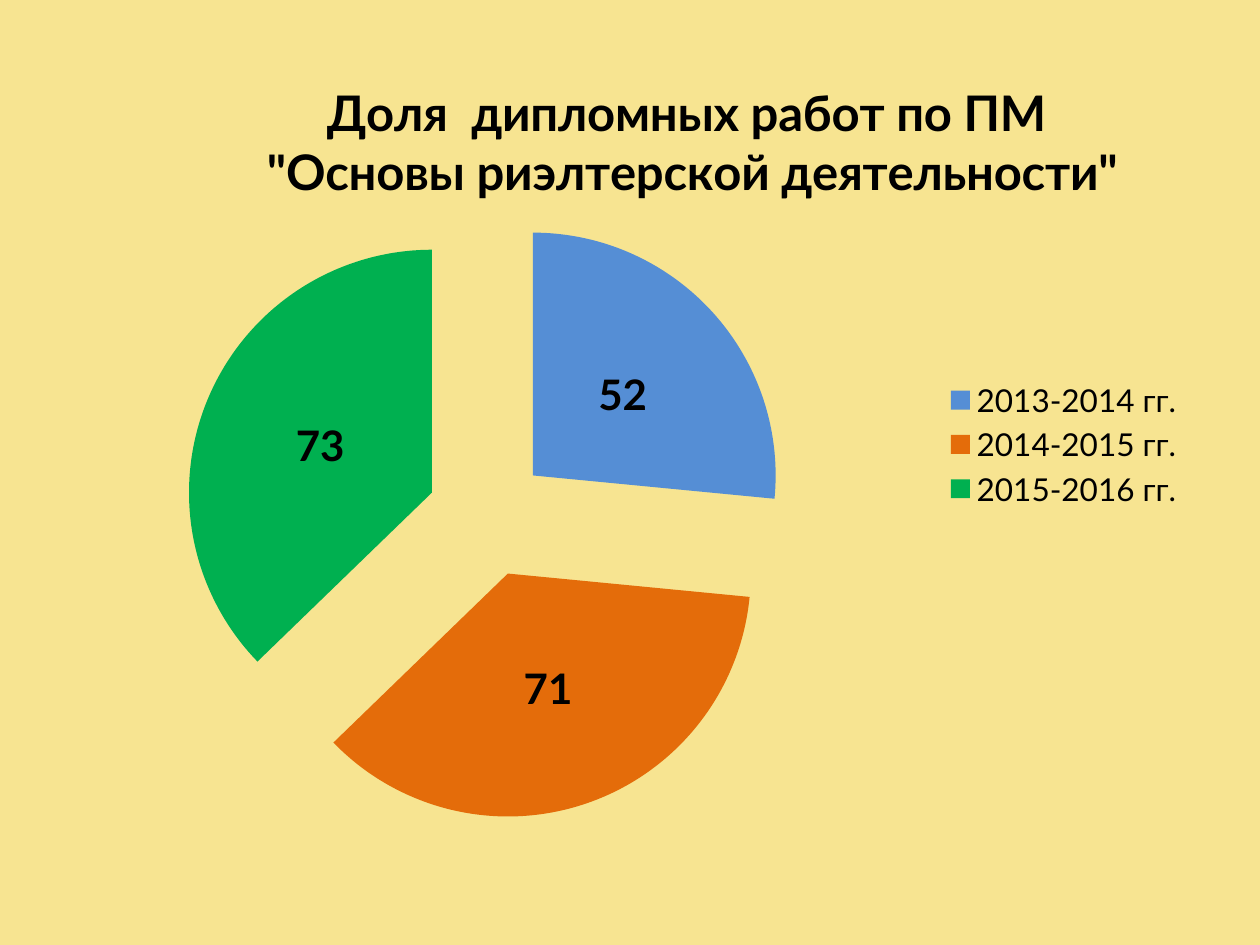
from dataclasses import dataclass

from lxml.etree import SubElement
from pptx import Presentation
from pptx.chart.data import CategoryChartData
from pptx.dml.color import RGBColor
from pptx.enum.chart import XL_CHART_TYPE, XL_LABEL_POSITION, XL_LEGEND_POSITION
from pptx.oxml.ns import qn
from pptx.util import Pt

EMU_PER_PX = 914400 // 126


@dataclass(frozen=True)
class Theme:
    font: str = "Lato"
    background: str = "F7E491"
    ink: str = "000000"
    slices: tuple = ("558ED5", "E46C0A", "00B050")
    title_size: int = 28
    label_size: int = 24
    legend_size: int = 18


class SlideBuilder:
    """Draws themed elements on the current slide."""

    def __init__(self, slide, theme):
        self.slide = slide
        self.theme = theme

    def background(self):
        self.paint(self.slide.background.fill, self.theme.background)

    def paint(self, fill, color):
        fill.solid()
        fill.fore_color.rgb = RGBColor.from_string(color)

    def style(self, font, size, bold=False):
        font.name = self.theme.font
        font.size = Pt(size)
        font.bold = bold
        font.color.rgb = RGBColor.from_string(self.theme.ink)

    def place(self, element, frame, **fractions):
        layout = element.find(qn("c:layout"))
        if layout is None:
            layout = element.makeelement(qn("c:layout"))
            element.insert(0, layout)
        manual = SubElement(layout, qn("c:manualLayout"))
        settings = {**frame, "xMode": "edge", "yMode": "edge", **fractions}
        for name, value in settings.items():
            SubElement(manual, qn(f"c:{name}")).set("val", str(value))

    def pie(self, box, shares, explosion):
        data = CategoryChartData()
        data.categories = list(shares)
        data.add_series("Series 1", list(shares.values()))
        bounds = [px * EMU_PER_PX for px in box]
        chart = self.slide.shapes.add_chart(XL_CHART_TYPE.PIE, *bounds, data).chart
        self.style(chart.font, self.theme.legend_size)

        plot = chart.plots[0]
        plot.vary_by_categories = True
        years = plot.series[0]
        for index, color in enumerate(self.theme.slices):
            self.paint(years.points[index].format.fill, color)
        burst = years._element.makeelement(qn("c:explosion"), {"val": str(explosion)})
        years._element.find(qn("c:tx")).addnext(burst)

        plot.has_data_labels = True
        labels = plot.data_labels
        labels.show_value = True
        labels.show_percentage = False
        labels.position = XL_LABEL_POSITION.CENTER
        self.style(labels.font, self.theme.label_size, bold=True)

        chart.has_legend = True
        chart.legend.position = XL_LEGEND_POSITION.RIGHT
        chart.legend.include_in_layout = False
        self.style(chart.legend.font, self.theme.legend_size)
        plot_area = chart._chartSpace.chart.plotArea
        self.place(plot_area, {"layoutTarget": "inner"}, x=0.12, y=0.21, w=0.53, h=0.76)
        return chart

    def chart_title(self, chart, lines):
        chart.has_title = True
        title = chart.chart_title
        title.include_in_layout = False
        frame = title.text_frame
        for index, line in enumerate(lines):
            paragraph = frame.add_paragraph() if index else frame.paragraphs[0]
            run = paragraph.add_run()
            run.text = line
            self.style(run.font, self.theme.title_size, bold=True)
        self.place(chart._chartSpace.chart.find(qn("c:title")), {}, x=0.19, y=0.04)


def main():
    presentation = Presentation()
    presentation.slide_width = 1260 * EMU_PER_PX
    presentation.slide_height = 945 * EMU_PER_PX
    slide = presentation.slides.add_slide(presentation.slide_layouts[6])
    builder = SlideBuilder(slide, Theme())
    builder.background()
    diploma_shares = {"2013-2014 гг.": 52, "2014-2015 гг.": 71, "2015-2016 гг.": 73}
    diploma_pie = builder.pie((44, 45, 1153, 799), diploma_shares, explosion=25)
    builder.chart_title(
        diploma_pie,
        ["Доля  дипломных работ по ПМ ", '"Основы риэлтерской деятельности"'],
    )
    presentation.save("out.pptx")


if __name__ == "__main__":
    main()
